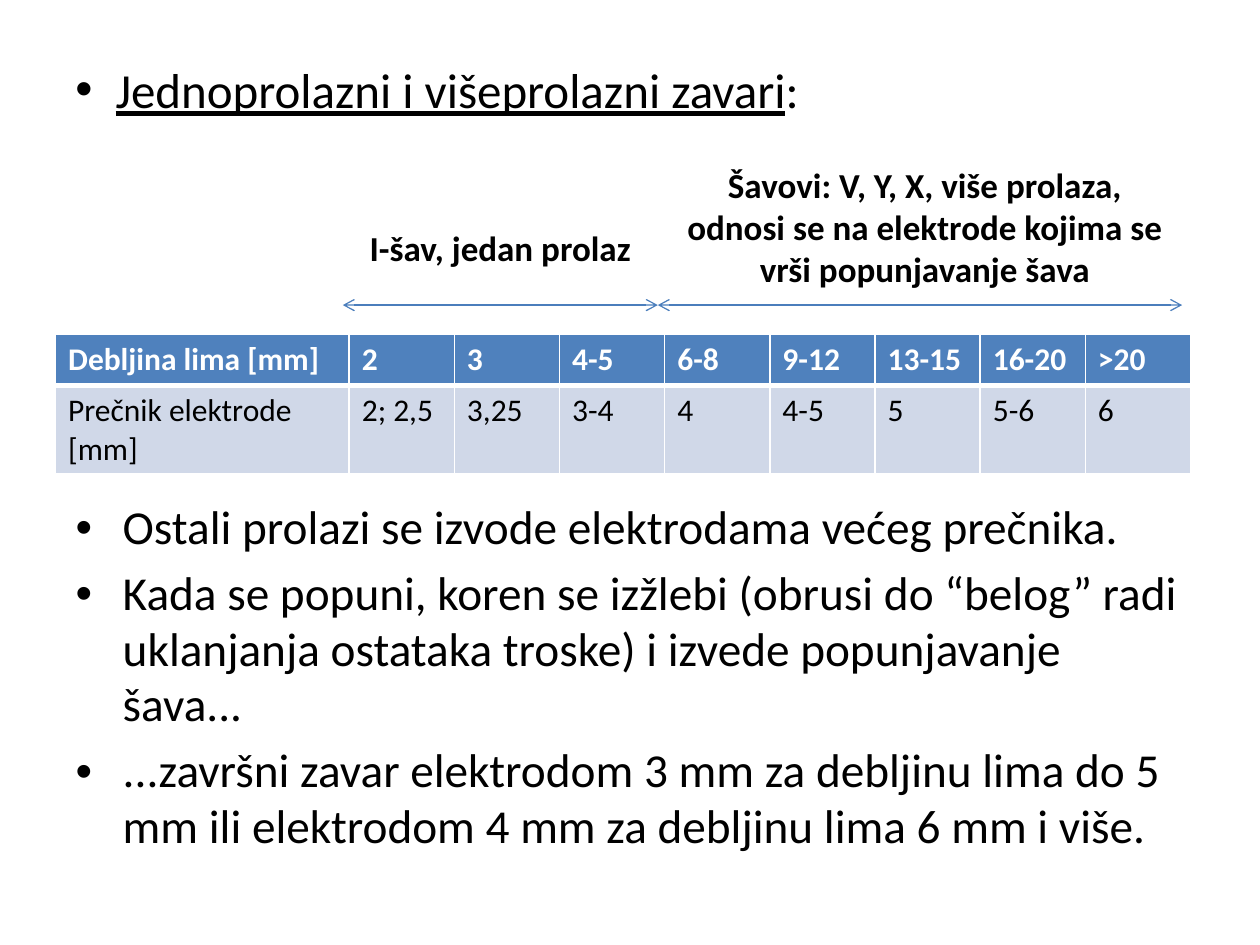
"""Build a slide about single-pass and multi-pass welds."""
from lxml import etree
from pptx import Presentation
from pptx.dml.color import RGBColor
from pptx.enum.shapes import MSO_CONNECTOR
from pptx.enum.text import MSO_ANCHOR, MSO_AUTO_SIZE, PP_ALIGN
from pptx.oxml.ns import qn
from pptx.util import Cm, Pt

STRAIGHT = MSO_CONNECTOR.STRAIGHT
TOP = MSO_ANCHOR.TOP
NO_AUTOFIT = MSO_AUTO_SIZE.NONE
CENTER = PP_ALIGN.CENTER
COLORS = {"text": "000000", "white": "FFFFFF", "header": "4F81BD",
          "band": "D0D8E8", "arrow": "4B7EBC"}


def add_run(paragraph, text, size, color="text", bold=False, underline=False):
    run = paragraph.add_run()
    run.text = text
    run.font.name = "Calibri"
    run.font.size = Pt(size)
    run.font.bold = bold
    run.font.underline = underline
    run.font.color.rgb = RGBColor.from_string(COLORS[color])


def set_bullet(paragraph, indent):
    properties = paragraph._p.get_or_add_pPr()
    properties.set("marL", str(indent))
    properties.set("indent", str(-indent))
    etree.SubElement(properties, qn("a:buFont"), typeface="Arial")
    etree.SubElement(properties, qn("a:buChar"), char="•")


presentation = Presentation()
presentation.slide_width = Cm(25.4)
presentation.slide_height = Cm(19.05)
slide = presentation.slides.add_slide(presentation.slide_layouts[1])
title = slide.shapes.title
title.element.getparent().remove(title.element)

body = slide.placeholders[1]
body.left, body.top, body.width, body.height = Cm(1.27), Cm(8.38), Cm(22.86), Cm(9.4)
body_frame = body.text_frame
body_frame.auto_size = NO_AUTOFIT
body_frame.vertical_anchor = TOP
body_frame.margin_top = Cm(1.7)
body_texts = [
    "Ostali prolazi se izvode elektrodama većeg prečnika.",
    "Kada se popuni, koren se izžlebi (obrusi do “belog” radi uklanjanja ostataka troske) "
    "i izvede popunjavanje šava...",
    "...završni zavar elektrodom 3 mm za debljinu lima do 5 mm ili elektrodom 4 mm "
    "za debljinu lima 6 mm i više.",
]
for index, text in enumerate(body_texts):
    paragraph = body_frame.add_paragraph() if index else body_frame.paragraphs[0]
    paragraph.line_spacing = 0.98
    paragraph.space_before = Pt(6 if index else 0)
    set_bullet(paragraph, Cm(0.95))
    add_run(paragraph, text, 27)

heading = slide.shapes.add_textbox(Cm(1.27), Cm(1.07), Cm(15.7), Cm(1.45))
heading.text_frame.word_wrap = True
paragraph = heading.text_frame.paragraphs[0]
set_bullet(paragraph, Cm(0.81))
add_run(paragraph, "Jednoprolazni i višeprolazni zavari", 28, underline=True)
add_run(paragraph, ":", 28)

arrow_y = Cm(6.15)
for start, end in [(6.91, 13.26), (13.26, 23.83)]:
    arrow = slide.shapes.add_connector(STRAIGHT, Cm(start), arrow_y, Cm(end), arrow_y)
    arrow.line.color.rgb = RGBColor.from_string(COLORS["arrow"])
    arrow.line.width = Pt(0.75)
    line = arrow.line._get_or_add_ln()
    for tag in ("a:headEnd", "a:tailEnd"):
        etree.SubElement(line, qn(tag), type="arrow")
    etree.SubElement(arrow._element.spPr, qn("a:effectLst"))

labels = [
    ("I-šav, jedan prolaz", 6.91, 4.45, 6.35, 1.12),
    ("Šavovi: V, Y, X, više prolaza, odnosi se na elektrode kojima se vrši popunjavanje šava",
     13.46, 3.18, 10.37, 2.82),
]
for text, left, top, width, height in labels:
    label = slide.shapes.add_textbox(Cm(left), Cm(top), Cm(width), Cm(height))
    label.text_frame.word_wrap = True
    paragraph = label.text_frame.paragraphs[0]
    paragraph.alignment = CENTER
    add_run(paragraph, text, 20, bold=True)

rows = [
    ["Debljina lima [mm]", "2", "3", "4-5", "6-8", "9-12", "13-15", "16-20", ">20"],
    ["Prečnik elektrode [mm]", "2; 2,5", "3,25", "3-4", "4", "4-5", "5", "5-6", "6"],
]
table = slide.shapes.add_table(
    len(rows), len(rows[0]), Cm(1.12), Cm(6.73), Cm(22.86), Cm(2.82)).table
for index, column in enumerate(table.columns):
    column.width = Cm(2.12 if index else 5.92)
table.rows[0].height = Cm(1.04)
table.rows[1].height = Cm(1.78)
for row_index, row in enumerate(rows):
    is_header = row_index == 0
    for column_index, text in enumerate(row):
        cell = table.cell(row_index, column_index)
        cell_properties = cell._tc.get_or_add_tcPr()
        for side in "LRTB":
            thick = side == ("B" if is_header else "T")
            border = etree.SubElement(
                cell_properties, qn(f"a:ln{side}"), w=str(Pt(3 if thick else 1)))
            fill = etree.SubElement(border, qn("a:solidFill"))
            etree.SubElement(fill, qn("a:srgbClr"), val=COLORS["white"])
        cell.fill.solid()
        cell.fill.fore_color.rgb = RGBColor.from_string(
            COLORS["header" if is_header else "band"])
        add_run(cell.text_frame.paragraphs[0], text, 18,
                "white" if is_header else "text", bold=is_header)

presentation.save("out.pptx")
